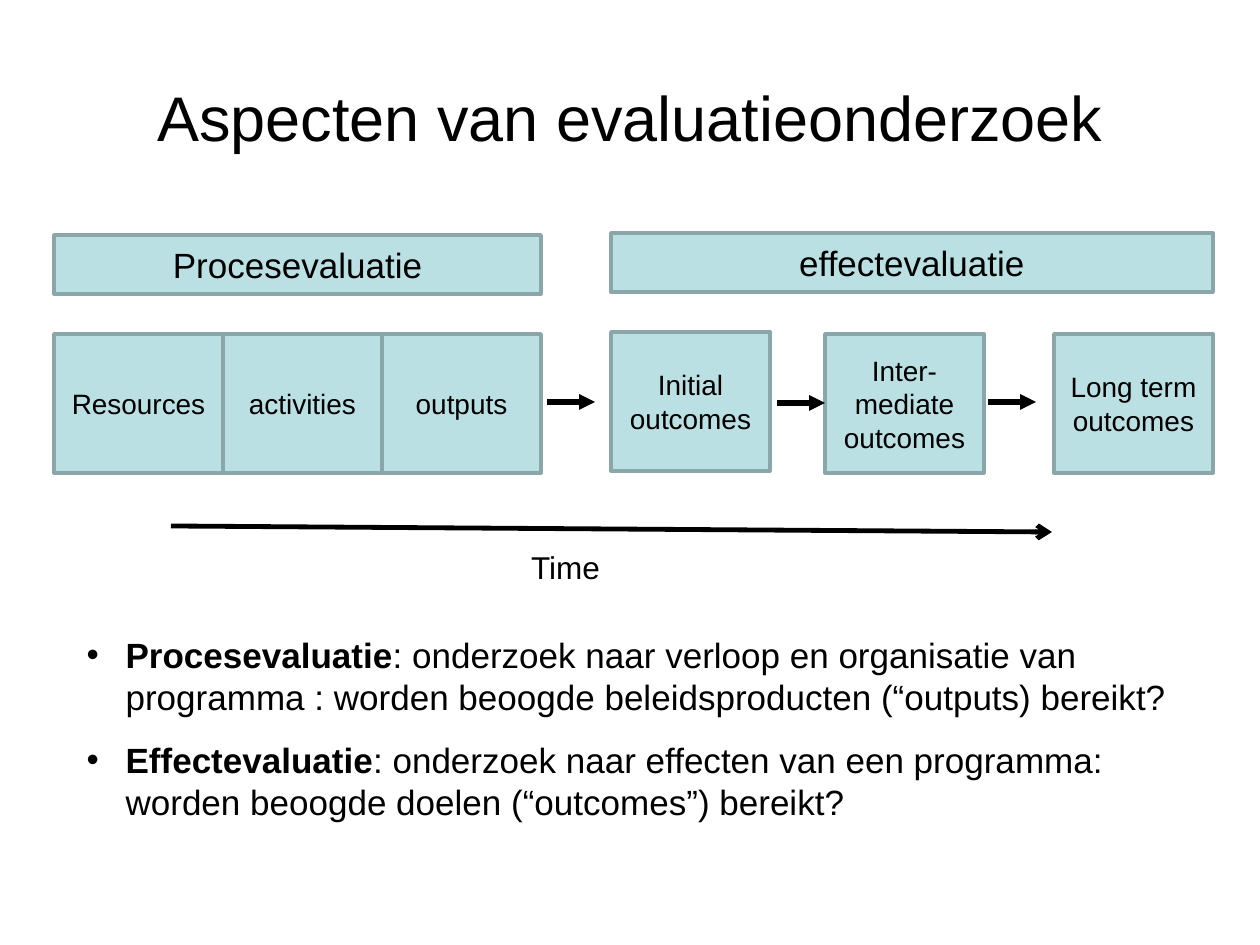
from dataclasses import dataclass

from lxml.etree import SubElement
from pptx import Presentation
from pptx.dml.color import RGBColor
from pptx.enum.shapes import MSO_CONNECTOR, MSO_SHAPE
from pptx.enum.text import MSO_ANCHOR, MSO_AUTO_SIZE, PP_ALIGN
from pptx.oxml.ns import qn
from pptx.util import Pt


@dataclass(frozen=True)
class Theme:
    font: str = "Arial"
    ink: RGBColor = RGBColor(0x00, 0x00, 0x00)
    fill: RGBColor = RGBColor(0xBB, 0xE0, 0xE3)
    border: RGBColor = RGBColor(0x8A, 0xA6, 0xA8)
    title: int = 36
    heading: int = 20
    body: int = 20
    caption: int = 18
    step: int = 16


theme = Theme()
SCALE = 914400 / 126  # EMU in one px


def px(*lengths):
    return [round(length * SCALE) for length in lengths]


def add_text(para, text, size, bold=False, align=None):
    span = para.add_run()
    span.text = text
    span.font.name = theme.font
    span.font.size = Pt(size)
    span.font.bold = bold
    span.font.color.rgb = theme.ink
    if align is not None:
        para.alignment = align


deck = Presentation()
deck.slide_width, deck.slide_height = px(1260, 945)
page = deck.slides.add_slide(deck.slide_layouts[1])

# Title
title = page.shapes.title
title.left, title.top, title.width, title.height = px(63, 38, 1134, 157)
title.text_frame.vertical_anchor = MSO_ANCHOR.MIDDLE
add_text(title.text_frame.paragraphs[0], "Aspecten van evaluatieonderzoek",
         theme.title, align=PP_ALIGN.CENTER)

# Definitions
definitions = [
    ("Procesevaluatie", ": onderzoek naar verloop en organisatie van programma : "
     "worden beoogde beleidsproducten (“outputs) bereikt?"),
    ("Effectevaluatie", ": onderzoek naar effecten van een programma: "
     "worden beoogde doelen (“outcomes”) bereikt?"),
]
body = page.placeholders[1]
body.left, body.top, body.width, body.height = px(74, 626, 1120, 204)
frame = body.text_frame
frame.auto_size = MSO_AUTO_SIZE.SHAPE_TO_FIT_TEXT
frame.vertical_anchor = MSO_ANCHOR.MIDDLE
indent = px(39)[0]
for index, (term, meaning) in enumerate(definitions):
    para = frame.add_paragraph() if index else frame.paragraphs[0]
    para.space_before = Pt(12)
    properties = para._p.get_or_add_pPr()
    properties.set("marL", str(indent))
    properties.set("indent", str(-indent))
    SubElement(properties, qn("a:buFont"), typeface=theme.font)
    SubElement(properties, qn("a:buChar"), char="•")
    add_text(para, term, theme.body, bold=True)
    add_text(para, meaning, theme.body)

# Headings and steps: text, left, top, width, height, type size
step_width, step_height, heading_height = 159, 139, 59
boxes = [
    ("Resources", 54, 334, 169, step_height, theme.step),
    ("activities", 223, 334, step_width, step_height, theme.step),
    ("outputs", 382, 334, step_width, step_height, theme.step),
    ("Initial outcomes", 611, 332, step_width, step_height, theme.step),
    ("Inter-mediate outcomes", 825, 334, step_width, step_height, theme.step),
    ("Long term outcomes", 1054, 334, step_width, step_height, theme.step),
    ("Procesevaluatie", 54, 235, 487, heading_height, theme.heading),
    ("effectevaluatie", 611, 233, 602, heading_height, theme.heading),
]
for text, left, top, width, height, size in boxes:
    box = page.shapes.add_shape(MSO_SHAPE.RECTANGLE, *px(left, top, width, height))
    box.shadow.inherit = False
    box.fill.solid()
    box.fill.fore_color.rgb = theme.fill
    box.line.color.rgb = theme.border
    box.line.width = Pt(2)
    box.text_frame.word_wrap = True
    box.text_frame.vertical_anchor = MSO_ANCHOR.MIDDLE
    add_text(box.text_frame.paragraphs[0], text, size, align=PP_ALIGN.CENTER)

# Arrows between the steps, and the time axis: ends, line width, head
arrows = [
    (547, 402, 595, 402, 3, "triangle"),
    (777, 403, 825, 403, 3, "triangle"),
    (988, 402, 1036, 402, 3, "triangle"),
    (171, 526, 1052, 532, 2.75, "arrow"),
]
for *ends, weight, head in arrows:
    arrow = page.shapes.add_connector(MSO_CONNECTOR.STRAIGHT, *px(*ends))
    arrow.line.color.rgb = theme.ink
    arrow.line.width = Pt(weight)
    SubElement(arrow.line._get_or_add_ln(), qn("a:tailEnd"), type=head)
    SubElement(arrow._element.spPr, qn("a:effectLst"))

# Caption of the time axis
caption = page.shapes.add_textbox(*px(441, 542, 249, 50))
caption.text_frame.word_wrap = True
caption.text_frame.auto_size = MSO_AUTO_SIZE.SHAPE_TO_FIT_TEXT
add_text(caption.text_frame.paragraphs[0], "Time", theme.caption, align=PP_ALIGN.CENTER)

deck.save("out.pptx")
